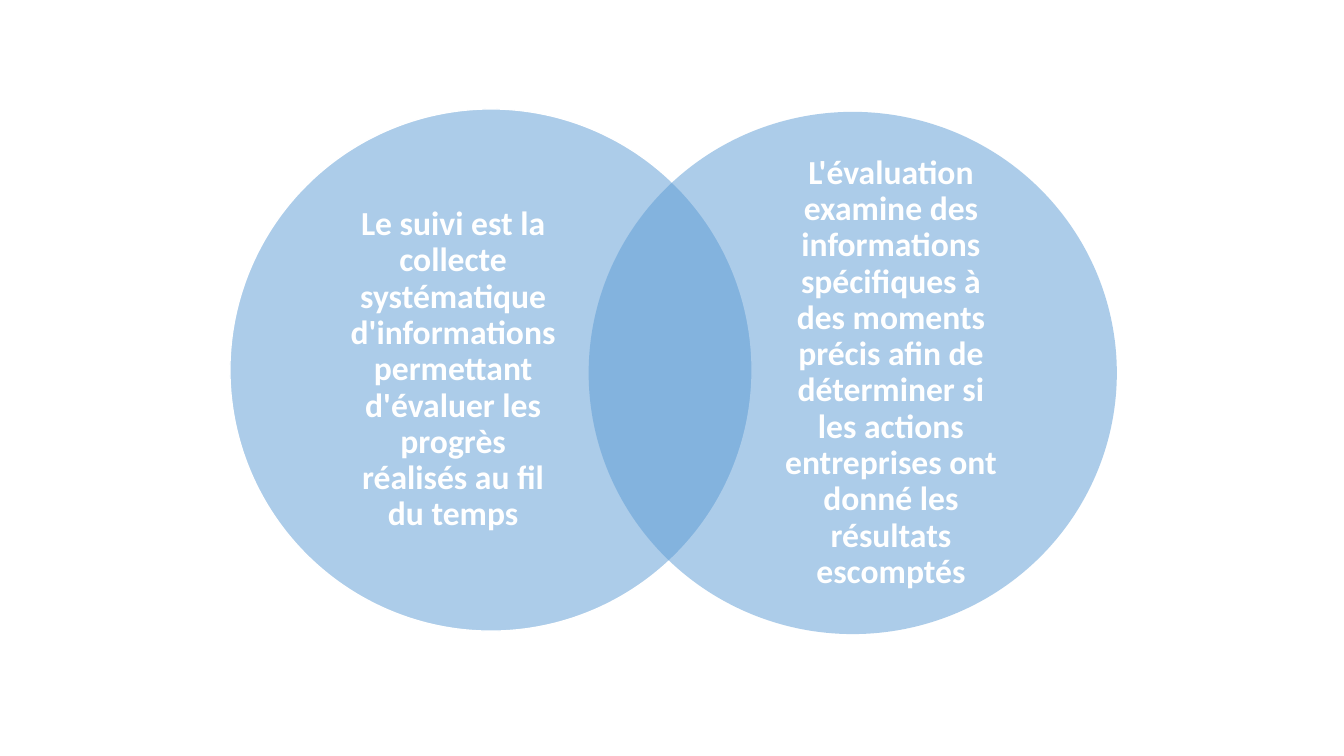
from lxml import etree
from pptx import Presentation
from pptx.dml.color import RGBColor
from pptx.enum.shapes import MSO_SHAPE
from pptx.enum.text import MSO_ANCHOR, PP_ALIGN
from pptx.oxml.ns import qn
from pptx.util import Pt

COLORS = {"circle": "5B9BD5", "white": "FFFFFF"}
FONT = "Calibri"

MONITORING = ("Le suivi est la collecte systématique d'informations permettant "
              "d'évaluer les progrès réalisés au fil du temps")
EVALUATION = ("L'évaluation examine des informations spécifiques à des moments "
              "précis afin de déterminer si les actions entreprises ont donné "
              "les résultats escomptés")


def rgb(name):
    return RGBColor.from_string(COLORS[name])


def add_circle(s, left, top, width, height, outlined=False):
    """Add a half-transparent circle of the Venn diagram."""
    sp = s.shapes.add_shape(MSO_SHAPE.OVAL, Pt(left), Pt(top), Pt(width), Pt(height))
    sp.shadow.inherit = False
    sp.fill.solid()
    sp.fill.fore_color.rgb = rgb("circle")
    color = sp.fill._xPr.find(qn("a:solidFill")).find(qn("a:srgbClr"))
    etree.SubElement(color, qn("a:alpha"), val="50000")
    if outlined:
        sp.line.color.rgb = rgb("white")
        sp.line.width = Pt(1)
    else:
        sp.line.fill.background()


def add_label(s, text, left, top, width, height):
    tf = s.shapes.add_textbox(Pt(left), Pt(top), Pt(width), Pt(height)).text_frame
    tf.word_wrap = True
    tf.vertical_anchor = MSO_ANCHOR.MIDDLE
    tf.margin_left = tf.margin_right = tf.margin_top = tf.margin_bottom = 0
    p = tf.paragraphs[0]
    p.text = text
    p.alignment = PP_ALIGN.CENTER
    p.line_spacing = 0.9
    p.font.name = FONT
    p.font.size = Pt(24)
    p.font.bold = True
    p.font.color.rgb = rgb("white")


def main():
    prs = Presentation()
    prs.slide_width, prs.slide_height = Pt(960), Pt(540)
    s = prs.slides.add_slide(prs.slide_layouts[6])

    add_circle(s, 164.2, 77.8, 373, 373, outlined=True)
    add_label(s, MONITORING, 247.7, 163.4, 152, 201.6)
    add_circle(s, 420.5, 79.9, 377.3, 373)
    add_label(s, EVALUATION, 559.4, 165.6, 154.1, 201.6)

    prs.save("out.pptx")


if __name__ == "__main__":
    main()
